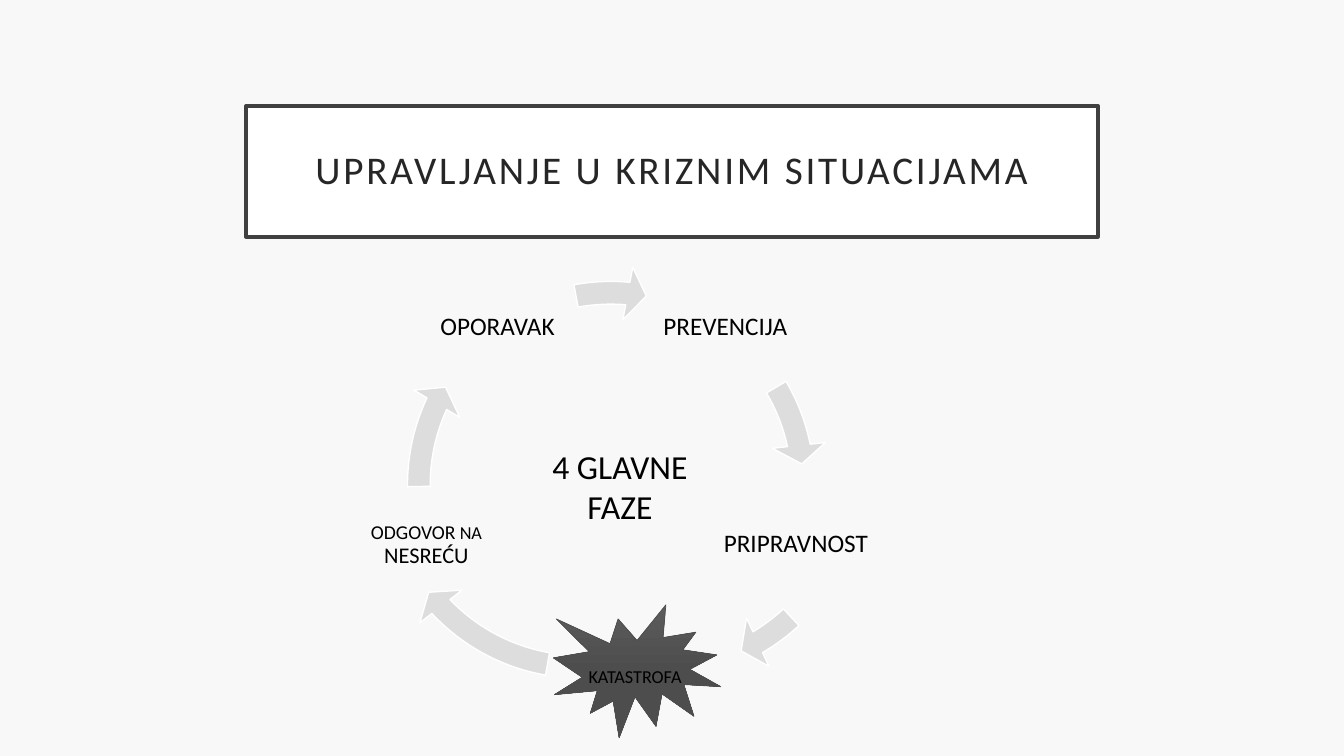
from lxml import etree
from pptx import Presentation, util as u
from pptx.dml.color import RGBColor
from pptx.enum import shapes, text
from pptx.oxml.ns import qn

# Content: boxes are (left, top, width, height) in percent of the slide
COLORS = {"back": "F8F8F8", "white": "FFFFFF", "frame": "404040",
          "title": "262626", "text": "000000", "arrow": "DDDDDD",
          "seal_top": "5C5C5C", "seal_low": "4A4A4A", "seal_line": "4D4D4D"}
FONT = "Calibri"
TITLE = ("UPRAVLJANJE U KRIZNIM SITUACIJAMA", (18.3, 14, 63.4, 17.33))
CENTRE = ("4 GLAVNE FAZE", (38.03, 58.27, 16.2, 12.13))
SEAL = (41.18, 80, 12.45, 17.6)
RING_SIZE = (32.55, 57.87)
RING = (29.18, 35.2)
# Each phase: runs (text, size), box, inset, ring corner, arrow head and tail degrees
PHASES = [
    ([("PREVENCIJA", 18)], (48.15, 35.6, 11.63, 15.47), 0.03,
     RING, 348.15, 329.43),
    ([("PRIPRAVNOST", 18)], (43.58, 61.33, 31.28, 21.47), 0.03,
     (32.85, 34.13), 59.48, 47.02),
    ([("KATASTROFA", 13)], (42.9, 81.87, 8.7, 15.47), 0.02,
     (26.93, 33.87), 136.68, 99.93),
    ([("ODGOVOR", 14), (" NA ", 13), ("NESREĆU", 16)],
     (27.38, 64.4, 8.7, 15.47), 0.02, RING, 204.98, 179.5),
    ([("OPORAVAK", 18)], (31.13, 35.6, 11.78, 15.47), 0.03,
     RING, 275.05, 259.54),
]
ARROW_WIDTH, HEAD_REACH, HEAD_WIDTH = 0.052, 5.6, 0.061

deck = Presentation()
deck.slide_width, deck.slide_height = u.Inches(13.333), u.Inches(7.5)
page = deck.slides.add_slide(deck.slide_layouts[6])


def color(name):
    return RGBColor.from_string(COLORS[name])


def place(box):
    sides = (deck.slide_width, deck.slide_height) * 2
    return [round(share * side / 100) for share, side in zip(box, sides)]


def add_figure(kind, box, fill, line, weight):
    figure = page.shapes.add_shape(kind, *place(box))
    figure.shadow.inherit = False
    if fill:
        figure.fill.solid()
        figure.fill.fore_color.rgb = color(fill)
    figure.line.color.rgb = color(line)
    figure.line.width = u.Pt(weight)
    return figure


def write(box, runs, ink="text", inset=None, spacing=0.9):
    frame = box.text_frame
    frame.word_wrap = True
    if inset is not None:
        frame.vertical_anchor = text.MSO_ANCHOR.MIDDLE
        frame.margin_left = frame.margin_right = u.Inches(inset)
        frame.margin_top = frame.margin_bottom = u.Inches(inset)
    para = frame.paragraphs[0]
    para.alignment = text.PP_ALIGN.CENTER
    para.line_spacing = spacing
    for words, size in runs:
        span = para.add_run()
        span.text = words
        span.font.name = FONT
        span.font.size = u.Pt(size)
        span.font.color.rgb = color(ink)
    return frame


# Background and title
page.background.fill.solid()
page.background.fill.fore_color.rgb = color("back")
title = add_figure(shapes.MSO_SHAPE.RECTANGLE, TITLE[1], "white", "frame", 2.5)
title_frame = write(title, [(TITLE[0], 28)], "title", 0.2)
title_frame.paragraphs[0].runs[0].font._element.set("spc", "200")

# Disaster burst, shaded from top to bottom
seal = add_figure(shapes.MSO_SHAPE.EXPLOSION1, SEAL, None, "seal_line", 0.5)
seal.fill.gradient()
seal.fill.gradient_angle = 270
for stop, name, share in zip(seal.fill.gradient_stops,
                             ("seal_top", "seal_low"), (0, 1)):
    stop.color.rgb = color(name)
    stop.position = share
stops = seal.fill.gradient_stops[0]._gs.getparent()
middle = etree.Element(qn("a:gs"), pos="50000")
etree.SubElement(middle, qn("a:srgbClr"), val=COLORS["seal_line"])
stops.insert(1, middle)

# Cycle: each phase label with the arrow that goes with it
for runs, box, inset, corner, head, tail in PHASES:
    write(page.shapes.add_textbox(*place(box)), runs, inset=inset)
    arrow = add_figure(shapes.MSO_SHAPE.CIRCULAR_ARROW, corner + RING_SIZE,
                       "arrow", "white", 1)
    # Angles are stored in 60000ths of a degree, adjustments in 100000ths
    values = (ARROW_WIDTH, HEAD_REACH * 0.6, head * 0.6, tail * 0.6, HEAD_WIDTH)
    for index, value in enumerate(values):
        arrow.adjustments[index] = value

# Centre caption
caption = write(page.shapes.add_textbox(*place(CENTRE[1])),
                [(CENTRE[0], 24)], spacing=1.0)
caption.auto_size = text.MSO_AUTO_SIZE.SHAPE_TO_FIT_TEXT

deck.save("out.pptx")
